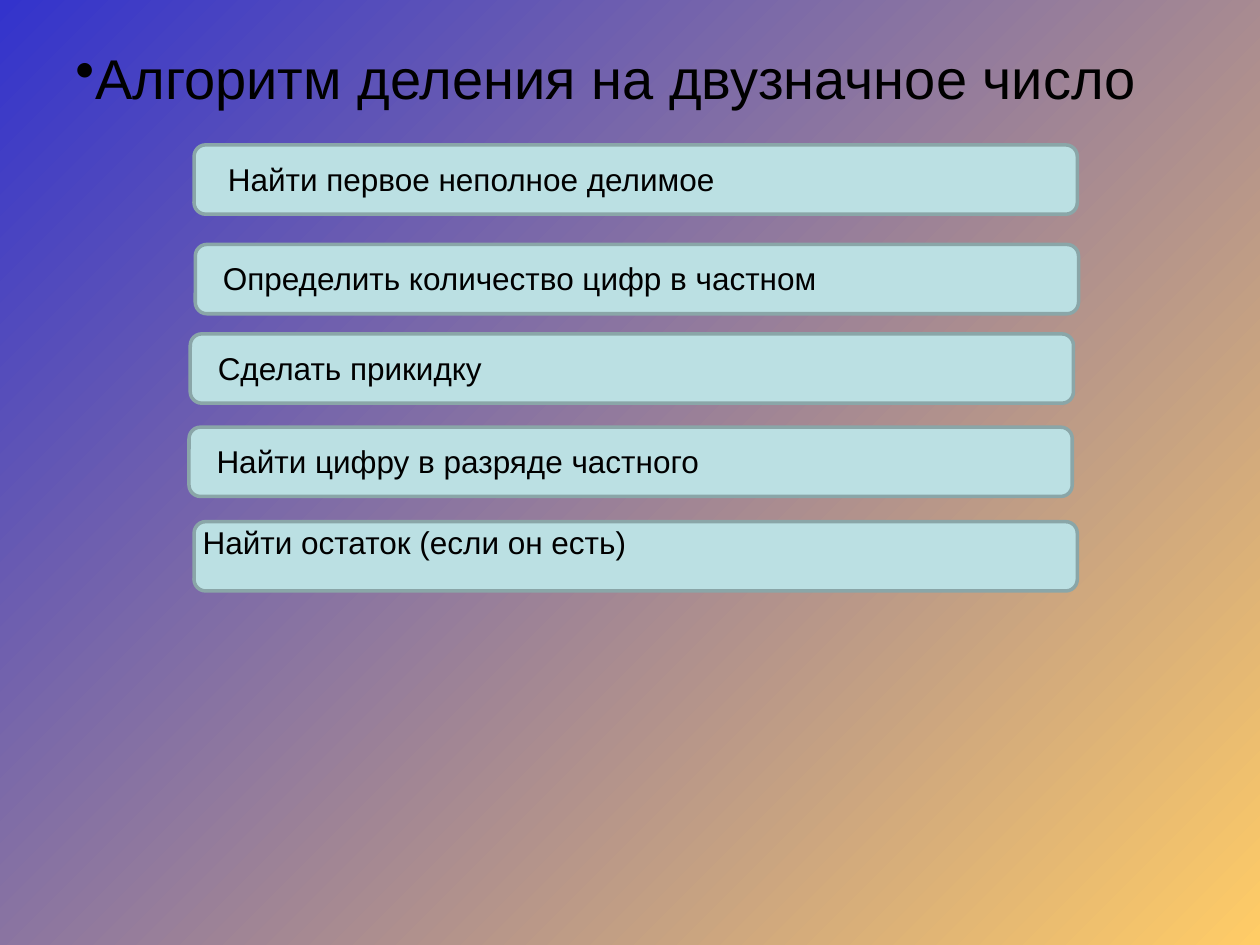
from pptx import Presentation
from pptx import util as u
from pptx.dml.color import RGBColor
from pptx.enum import shapes, text
from lxml import etree


def rgb(value):
    return RGBColor.from_string(value)


def write(tf, words, size):
    """Put one black Arial paragraph in a text frame."""
    tf.word_wrap = True
    p = tf.paragraphs[0]
    p.text = words
    p.font.name = "Arial"
    p.font.size = u.Pt(size)
    p.font.color.rgb = rgb("000000")
    return p


prs = Presentation()
prs.slide_width, prs.slide_height = u.Inches(10), u.Inches(7.5)
s = prs.slides.add_slide(prs.slide_layouts[6])

# Diagonal background gradient (angle runs counter-clockwise)
fill = s.background.fill
fill.gradient()
fill.gradient_angle = 315
for stop, position, color in zip(fill.gradient_stops, (0, 1), ("3333CC", "FFCC66")):
    stop.position = position
    stop.color.rgb = rgb(color)

# Bulleted heading
heading = s.shapes.add_textbox(u.Inches(0.5), u.Inches(0.3), u.Inches(9), u.Inches(6.4))
p = write(heading.text_frame, "Алгоритм деления на двузначное число", 32)
p.space_before = u.Pt(4)
pPr = p._p.get_or_add_pPr()
pPr.set("marL", "0")
pPr.set("indent", "0")
ns = "{http://schemas.openxmlformats.org/drawingml/2006/main}"
bullet = etree.Element(ns + "buChar", char="•")
pPr.find(ns + "spcBef").addnext(bullet)

# Steps: bar left and top, text offset from the bar, wording
steps = [
    (1.54, 1.15, 0.17, 0.07, "Найти первое неполное делимое"),
    (1.55, 1.94, 0.12, 0.07, "Определить количество цифр в частном"),
    (1.51, 2.65, 0.12, 0.07, "Сделать прикидку"),
    (1.50, 3.39, 0.12, 0.07, "Найти цифру в разряде частного"),
    (1.54, 4.14, -0.03, -0.04, "Найти остаток (если он есть)"),
]
for left, top, dx, dy, words in steps:
    group = s.shapes.add_group_shape()
    bar = group.shapes.add_shape(
        shapes.MSO_SHAPE.ROUNDED_RECTANGLE,
        u.Inches(left), u.Inches(top), u.Inches(7.01), u.Inches(0.55))
    bar.shadow.inherit = False
    bar.fill.solid()
    bar.fill.fore_color.rgb = rgb("BBE0E3")
    bar.line.color.rgb = rgb("8AA6A8")
    bar.line.width = u.Pt(2)

    label = group.shapes.add_textbox(
        u.Inches(left + dx), u.Inches(top + dy), u.Inches(6.69), u.Inches(0.4))
    write(label.text_frame, words, 18)
    label.text_frame.auto_size = text.MSO_AUTO_SIZE.SHAPE_TO_FIT_TEXT

prs.save("out.pptx")
